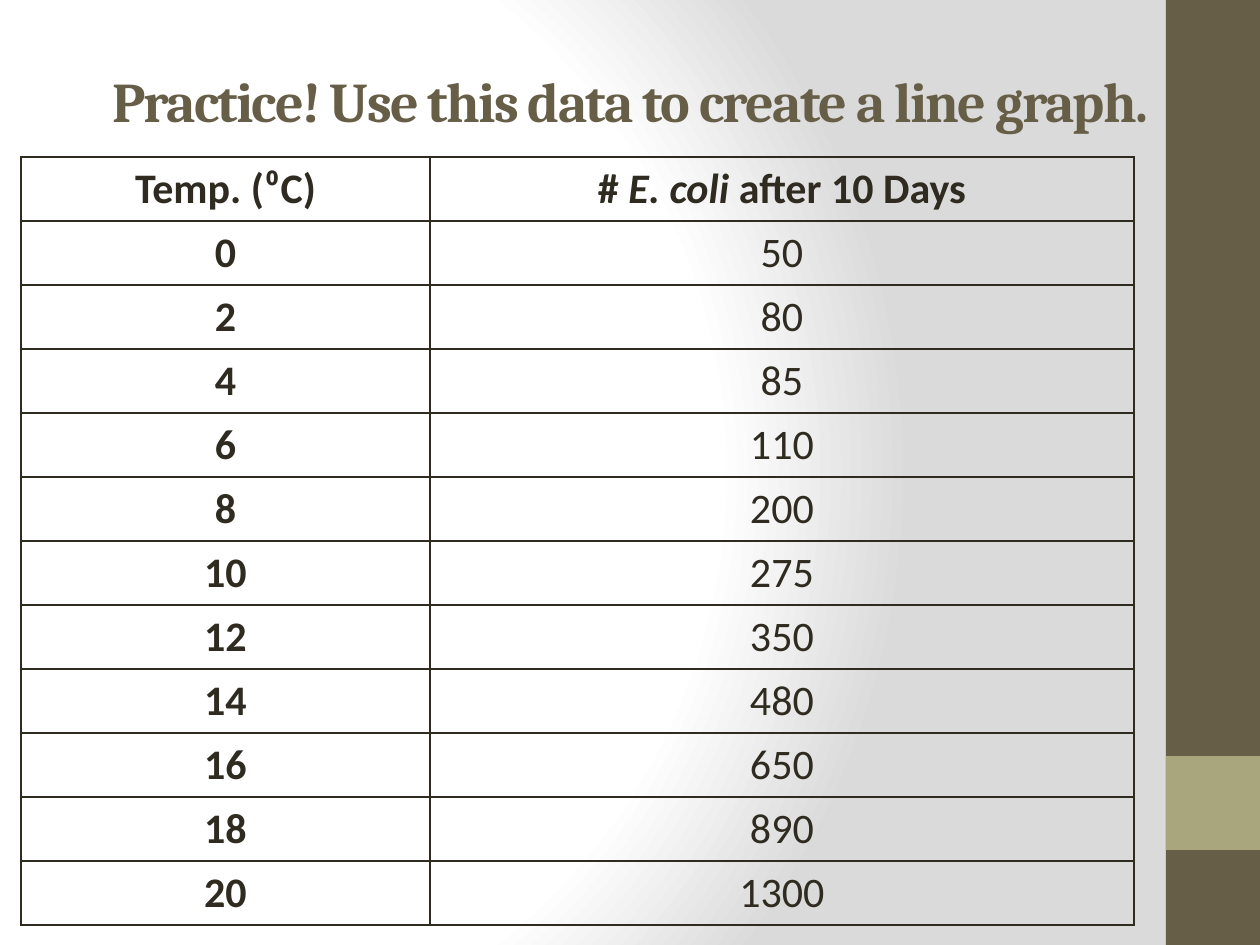
import lxml.etree
import pptx
import pptx.dml.color
import pptx.enum.shapes
import pptx.enum.text
import pptx.oxml
import pptx.oxml.ns
import pptx.util

EMU_PER_PX = 914400 / 126
COLORS = {
    "brown": "675E47",
    "olive": "A9A57C",
    "ink": "2F2B20",
    "white": "FFFFFF",
    "gray": "DADADA",
}
READINGS = [
    (0, 50), (2, 80), (4, 85), (6, 110), (8, 200), (10, 275),
    (12, 350), (14, 480), (16, 650), (18, 890), (20, 1300),
]
NAMESPACE = pptx.oxml.ns.nsdecls("a")


def px(*lengths):
    return [pptx.util.Emu(round(length * EMU_PER_PX)) for length in lengths]


def rgb(name):
    return pptx.dml.color.RGBColor.from_string(COLORS[name])


class DataSlide:
    heading_font = "Cambria"
    body_font = "Calibri"
    heading_size = 32
    body_size = 24

    def __init__(self, deck):
        self.slide = deck.slides.add_slide(deck.slide_layouts[6])

    def background(self, stops, focus):
        self.slide.background.fill.gradient()
        gradient = next(self.slide.element.iter(pptx.oxml.ns.qn("a:gradFill")))
        stop_xml = "".join(
            f'<a:gs pos="{percent * 1000}"><a:srgbClr val="{COLORS[color]}"/></a:gs>'
            for percent, color in stops
        )
        edges = " ".join(f'{side}="{percent * 1000}"' for side, percent in zip("ltrb", focus))
        radial = pptx.oxml.parse_xml(
            f'<a:gradFill {NAMESPACE} rotWithShape="1"><a:gsLst>{stop_xml}</a:gsLst>'
            f'<a:path path="circle"><a:fillToRect {edges}/></a:path></a:gradFill>'
        )
        gradient.getparent().replace(gradient, radial)

    def band(self, left, top, width, height, color):
        band = self.slide.shapes.add_shape(
            pptx.enum.shapes.MSO_SHAPE.RECTANGLE, *px(left, top, width, height)
        )
        band.shadow.inherit = False
        band.fill.solid()
        band.fill.fore_color.rgb = rgb(color)
        band.line.fill.background()

    def style(self, run, font, size, color, bold, italic=False):
        run.font.name = font
        run.font.size = pptx.util.Pt(size)
        run.font.color.rgb = rgb(color)
        run.font.bold = bold
        run.font.italic = italic

    def heading(self, left, top, width, height, wording):
        frame = self.slide.shapes.add_textbox(*px(left, top, width, height)).text_frame
        frame.word_wrap = True
        frame.vertical_anchor = pptx.enum.text.MSO_ANCHOR.MIDDLE
        frame.text = wording
        line = frame.paragraphs[0]
        line.alignment = pptx.enum.text.PP_ALIGN.CENTER
        self.style(line.runs[0], self.heading_font, self.heading_size, "brown", True)
        line.runs[0].font._element.set("spc", "-100")

    def cell(self, cell, pieces, bold, anchor):
        cell.vertical_anchor = anchor
        line = cell.text_frame.paragraphs[0]
        line.alignment = pptx.enum.text.PP_ALIGN.CENTER
        for wording, italic in pieces:
            run = line.add_run()
            run.text = wording
            self.style(run, self.body_font, self.body_size, "ink", bold, italic)
        properties = cell._tc.get_or_add_tcPr()
        for side in "LRTB":
            properties.append(pptx.oxml.parse_xml(
                f'<a:ln{side} {NAMESPACE} w="12700"><a:solidFill>'
                f'<a:srgbClr val="{COLORS["ink"]}"/></a:solidFill></a:ln{side}>'
            ))
        lxml.etree.SubElement(properties, pptx.oxml.ns.qn("a:noFill"))

    def table(self, left, top, column_widths, row_height, header, readings):
        row_count = len(readings) + 1
        table = self.slide.shapes.add_table(
            row_count, len(column_widths),
            *px(left, top, sum(column_widths), row_height * row_count)
        ).table
        table.first_row = False
        table.horz_banding = False
        for column, width in zip(table.columns, px(*column_widths)):
            column.width = width
        for row in table.rows:
            row.height = px(row_height)[0]
        anchors = pptx.enum.text.MSO_ANCHOR
        for column, pieces in enumerate(header):
            self.cell(table.cell(0, column), pieces, True, anchors.TOP)
        for row, reading in enumerate(readings, start=1):
            for column, value in enumerate(reading):
                self.cell(table.cell(row, column), [(str(value), False)],
                          column == 0, anchors.MIDDLE)


def main():
    deck = pptx.Presentation()
    deck.slide_width, deck.slide_height = px(1260, 945)
    page = DataSlide(deck)
    page.background([(0, "white"), (75, "white"), (100, "gray")], (20, 50, 100, 50))
    page.band(1166, 0, 94, 945, "brown")
    page.band(1166, 756, 94, 94, "olive")
    page.heading(63, 21, 1134, 158, "Practice! Use this data to create a line graph.")
    header = [
        [("Temp. (⁰C)", False)],
        [("# ", False), ("E. coli", True), (" after 10 Days", False)],
    ]
    page.table(21, 157, [409, 704], 64, header, READINGS)
    deck.save("out.pptx")


if __name__ == "__main__":
    main()
